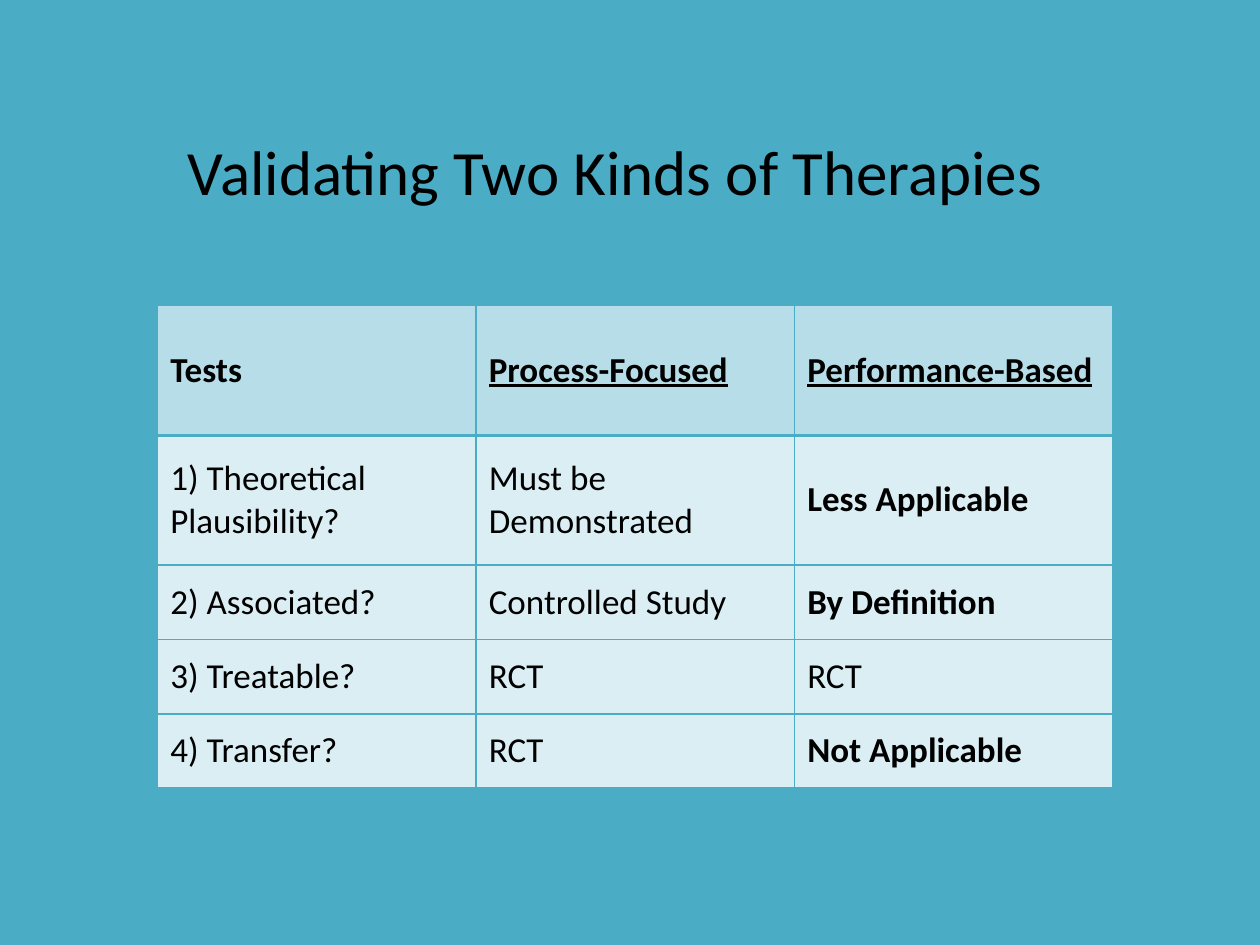
from lxml import etree
from pptx import Presentation
from pptx import util as u
from pptx.dml.color import RGBColor
from pptx.enum import text
from pptx.oxml import ns

TITLE = "Validating Two Kinds of Therapies"
TESTS = [
    ("Tests", "Process-Focused", "Performance-Based"),
    ("1) Theoretical Plausibility?", "Must be Demonstrated", "Less Applicable"),
    ("2) Associated?", "Controlled Study", "By Definition"),
    ("3) Treatable?", "RCT", "RCT"),
    ("4) Transfer?", "RCT", "Not Applicable"),
]
STRONG = {"Less Applicable", "By Definition", "Not Applicable"}
COLORS = {"teal": "4BACC6", "header": "B7DEE8", "body": "DBEEF4", "ink": "000000"}
ROW_HEIGHTS = [2.62, 2.62, 1.5, 1.5, 1.5]
COLUMN_WIDTH = 6.42


def color(name):
    return RGBColor.from_string(COLORS[name])


def write(frame, words, size, bold=False, underline=False):
    run = frame.paragraphs[0].add_run()
    run.text = words
    run.font.name = "Calibri"
    run.font.size = u.Pt(size)
    run.font.bold = bold
    run.font.underline = underline
    run.font.color.rgb = color("ink")


def add_borders(cell, widths):
    properties = cell._tc.get_or_add_tcPr()
    for position, (side, width) in enumerate(widths.items()):
        line = etree.Element(ns.qn(f"a:ln{side}"), w=str(u.Pt(width)))
        fill = etree.SubElement(line, ns.qn("a:solidFill"))
        etree.SubElement(fill, ns.qn("a:srgbClr"), val=COLORS["teal"])
        properties.insert(position, line)


def add_title(slide):
    title = slide.shapes.title
    title.left, title.top, title.width, title.height = map(u.Cm, (2.34, 2.54, 20.12, 1.8))
    frame = title.text_frame
    frame.word_wrap = True
    frame.auto_size = text.MSO_AUTO_SIZE.NONE
    frame.vertical_anchor = text.MSO_ANCHOR.MIDDLE
    frame.paragraphs[0].alignment = text.PP_ALIGN.CENTER
    write(frame, TITLE, 36)


def add_tests(slide):
    columns = len(TESTS[0])
    tests = slide.shapes.add_table(
        len(TESTS), columns, u.Cm(3.18), u.Cm(6.15),
        u.Cm(COLUMN_WIDTH * columns), u.Cm(sum(ROW_HEIGHTS))).table
    for column in tests.columns:
        column.width = u.Cm(COLUMN_WIDTH)
    for r, (row, height) in enumerate(zip(TESTS, ROW_HEIGHTS)):
        tests.rows[r].height = u.Cm(height)
        header = r == 0
        for c, words in enumerate(row):
            cell = tests.cell(r, c)
            cell.vertical_anchor = text.MSO_ANCHOR.MIDDLE
            cell.fill.solid()
            cell.fill.fore_color.rgb = color("header" if header else "body")
            add_borders(cell, {"L": 1, "R": 1, "T": 2 if r == 1 else 1, "B": 2 if header else 1})
            write(cell.text_frame, words, 20, header or words in STRONG, header and c > 0)


def main():
    """Build the slide comparing how two kinds of therapies are validated."""
    deck = Presentation()
    deck.slide_width, deck.slide_height = u.Cm(25.4), u.Cm(19.05)
    slide = deck.slides.add_slide(deck.slide_layouts[5])
    slide.background.fill.solid()
    slide.background.fill.fore_color.rgb = color("teal")
    add_title(slide)
    add_tests(slide)
    deck.save("out.pptx")


if __name__ == "__main__":
    main()
